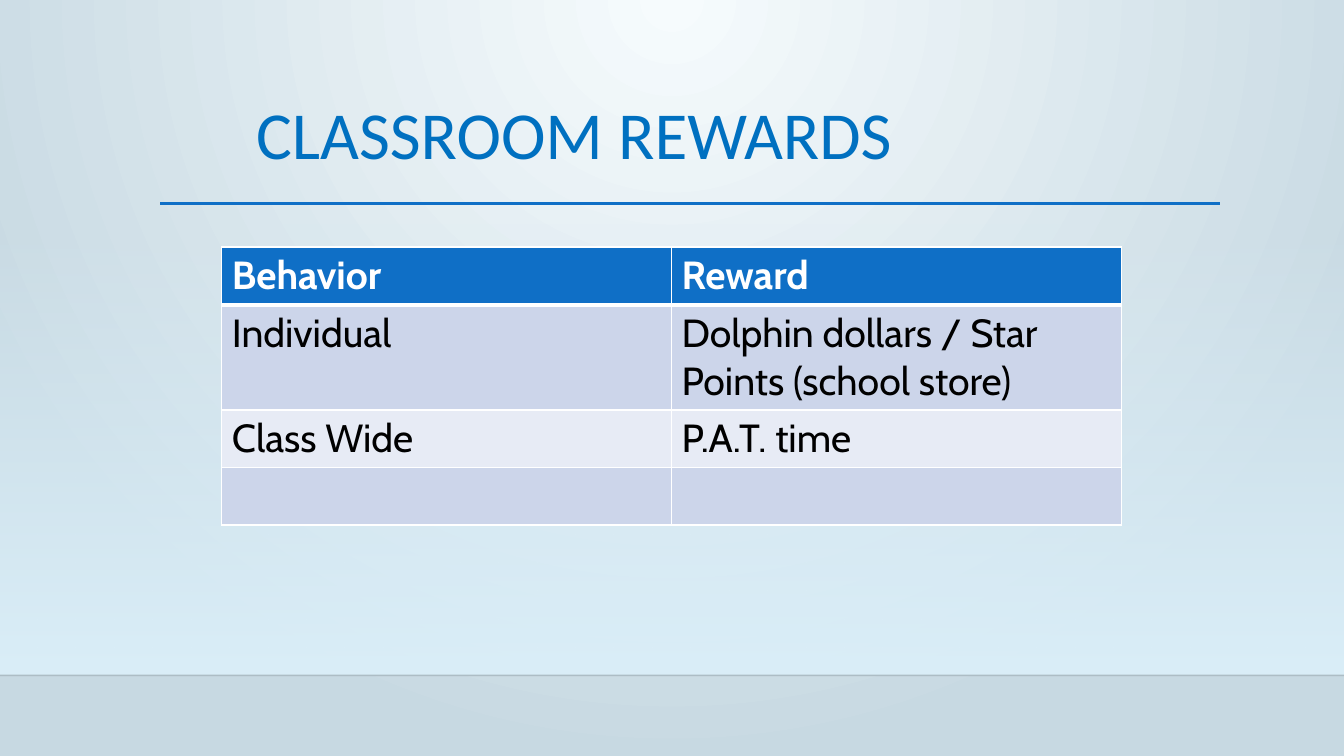
from dataclasses import dataclass

from lxml import etree
from pptx import Presentation
from pptx.dml.color import RGBColor
from pptx.enum.shapes import MSO_CONNECTOR, MSO_SHAPE
from pptx.enum.text import MSO_ANCHOR, MSO_AUTO_SIZE, PP_ALIGN
from pptx.oxml import parse_xml
from pptx.oxml.ns import nsdecls, qn
from pptx.slide import Slide
from pptx.table import _Cell
from pptx.text.text import _Paragraph
from pptx.util import Inches, Pt

STRAIGHT = MSO_CONNECTOR.STRAIGHT
RECTANGLE = MSO_SHAPE.RECTANGLE
MIDDLE = MSO_ANCHOR.MIDDLE
LEFT = PP_ALIGN.LEFT
NO_AUTOFIT = MSO_AUTO_SIZE.NONE
TITLE_ONLY = 5
SLIDE_WIDTH, SLIDE_HEIGHT = 13.33, 7.5
FLOOR_TOP = 6.7
HAZE_TOP = 2.21


@dataclass(frozen=True)
class Theme:
    accent: str = "0F6FC6"
    title: str = "0070C0"
    white: str = "FFFFFF"
    text: str = "000000"
    floor_edge: str = "000001"
    band_dark: str = "CCD5EA"
    band_light: str = "E7EBF5"
    glow: str = "F6FBFD"
    backdrop: str = "C7D9E2"
    haze: str = "DBEFF9"
    title_font: str = "Calibri"
    table_font: str = "Cabin"
    title_size: float = 48
    table_size: float = 28


THEME = Theme()


@dataclass(frozen=True)
class GradientStop:
    position: int
    color: str
    opacity: int = 100


@dataclass(frozen=True)
class Rule:
    left: float
    right: float
    y: float
    color: str
    width: float
    opacity: int = 100


@dataclass(frozen=True)
class RewardRow:
    behavior: str
    reward: str
    height: float
    fill: str
    color: str = THEME.text
    bold: bool = False
    top_border: float = 1
    bottom_border: float = 1


RULES = [
    Rule(0, SLIDE_WIDTH, FLOOR_TOP, THEME.floor_edge, 1, opacity=20),
    Rule(1.59, 12.1, 2.02, THEME.accent, 2.5),
]
REWARD_ROWS = [
    RewardRow("Behavior", "Reward", 0.57, THEME.accent, THEME.white, True, bottom_border=3),
    RewardRow("Individual", "Dolphin dollars / Star Points (school store)", 1.04,
              THEME.band_dark, top_border=3),
    RewardRow("Class Wide", "P.A.T. time", 0.57, THEME.band_light),
    RewardRow("", "", 0.57, THEME.band_dark),
]


def rgb(color: str) -> RGBColor:
    return RGBColor.from_string(color)


def set_gradient(owner: etree._Element, stops: list[GradientStop], direction: str) -> None:
    """Replace the gradient inside owner; direction is its a:lin or a:path element."""
    stop_xml = "".join(
        f'<a:gs pos="{stop.position * 1000}"><a:srgbClr val="{stop.color}">'
        f'<a:alpha val="{stop.opacity * 1000}"/></a:srgbClr></a:gs>'
        for stop in stops
    )
    gradient = owner.find(".//" + qn("a:gradFill"))
    gradient.getparent().replace(gradient, parse_xml(
        f'<a:gradFill {nsdecls("a")} rotWithShape="1">'
        f"<a:gsLst>{stop_xml}</a:gsLst>{direction}</a:gradFill>"
    ))


def add_backdrop(slide: Slide) -> None:
    slide.background.fill.gradient()
    set_gradient(
        slide.element,
        [GradientStop(0, THEME.glow), GradientStop(100, THEME.backdrop)],
        '<a:path path="circle"><a:fillToRect l="43000" t="0" r="43000" b="100000"/></a:path>',
    )
    haze = slide.shapes.add_shape(
        RECTANGLE, 0, Inches(HAZE_TOP), Inches(SLIDE_WIDTH), Inches(FLOOR_TOP - HAZE_TOP)
    )
    haze.shadow.inherit = False
    haze.line.fill.background()
    haze.fill.gradient()
    set_gradient(
        haze.element,
        [GradientStop(0, THEME.haze, 0), GradientStop(100, THEME.haze)],
        '<a:lin ang="5400000" scaled="0"/>',
    )


def add_rule(slide: Slide, rule: Rule) -> None:
    line = slide.shapes.add_connector(
        STRAIGHT, Inches(rule.left), Inches(rule.y), Inches(rule.right), Inches(rule.y)
    )
    line.line.color.rgb = rgb(rule.color)
    line.line.width = Pt(rule.width)
    properties = line.element.spPr
    if rule.opacity < 100:
        color = properties.find(".//" + qn("a:srgbClr"))
        etree.SubElement(color, qn("a:alpha"), val=str(rule.opacity * 1000))
    etree.SubElement(properties, qn("a:effectLst"))


def add_run(paragraph: _Paragraph, text: str, font: str, size: float, color: str,
            bold: bool = False) -> None:
    run = paragraph.add_run()
    run.text = text
    run.font.name = font
    run.font.size = Pt(size)
    run.font.color.rgb = rgb(color)
    run.font.bold = bold


def add_title(slide: Slide) -> None:
    title = slide.shapes.title
    title.left, title.top = Inches(2.44), Inches(0.74)
    title.width, title.height = Inches(8.68), Inches(1.26)
    frame = title.text_frame
    frame.auto_size = NO_AUTOFIT
    frame.vertical_anchor = MIDDLE
    paragraph = frame.paragraphs[0]
    paragraph.alignment = LEFT
    paragraph.line_spacing = 0.9
    add_run(paragraph, "CLASSROOM REWARDS", THEME.title_font, THEME.title_size, THEME.title)


def format_cell(cell: _Cell, text: str, row: RewardRow) -> None:
    cell.fill.solid()
    cell.fill.fore_color.rgb = rgb(row.fill)
    widths = {"lnL": 1, "lnR": 1, "lnT": row.top_border, "lnB": row.bottom_border}
    properties = cell._tc.get_or_add_tcPr()
    for index, (side, width) in enumerate(widths.items()):
        properties.insert(index, parse_xml(
            f'<a:{side} {nsdecls("a")} w="{Pt(width)}"><a:solidFill>'
            f'<a:srgbClr val="{THEME.white}"/></a:solidFill></a:{side}>'
        ))
    paragraph = cell.text_frame.paragraphs[0]
    if text:
        add_run(paragraph, text, THEME.table_font, THEME.table_size, row.color, row.bold)


def add_reward_table(slide: Slide) -> None:
    column_width = 4.46
    height = sum(row.height for row in REWARD_ROWS)
    table = slide.shapes.add_table(
        len(REWARD_ROWS), 2, Inches(2.2), Inches(2.45), Inches(2 * column_width), Inches(height)
    ).table
    for column in table.columns:
        column.width = Inches(column_width)
    for index, row in enumerate(REWARD_ROWS):
        table.rows[index].height = Inches(row.height)
        for column_index, text in enumerate((row.behavior, row.reward)):
            format_cell(table.cell(index, column_index), text, row)


def main() -> None:
    presentation = Presentation()
    presentation.slide_width = Inches(SLIDE_WIDTH)
    presentation.slide_height = Inches(SLIDE_HEIGHT)
    slide = presentation.slides.add_slide(presentation.slide_layouts[TITLE_ONLY])
    add_backdrop(slide)
    for rule in RULES:
        add_rule(slide, rule)
    add_title(slide)
    add_reward_table(slide)
    presentation.save("out.pptx")


if __name__ == "__main__":
    main()
